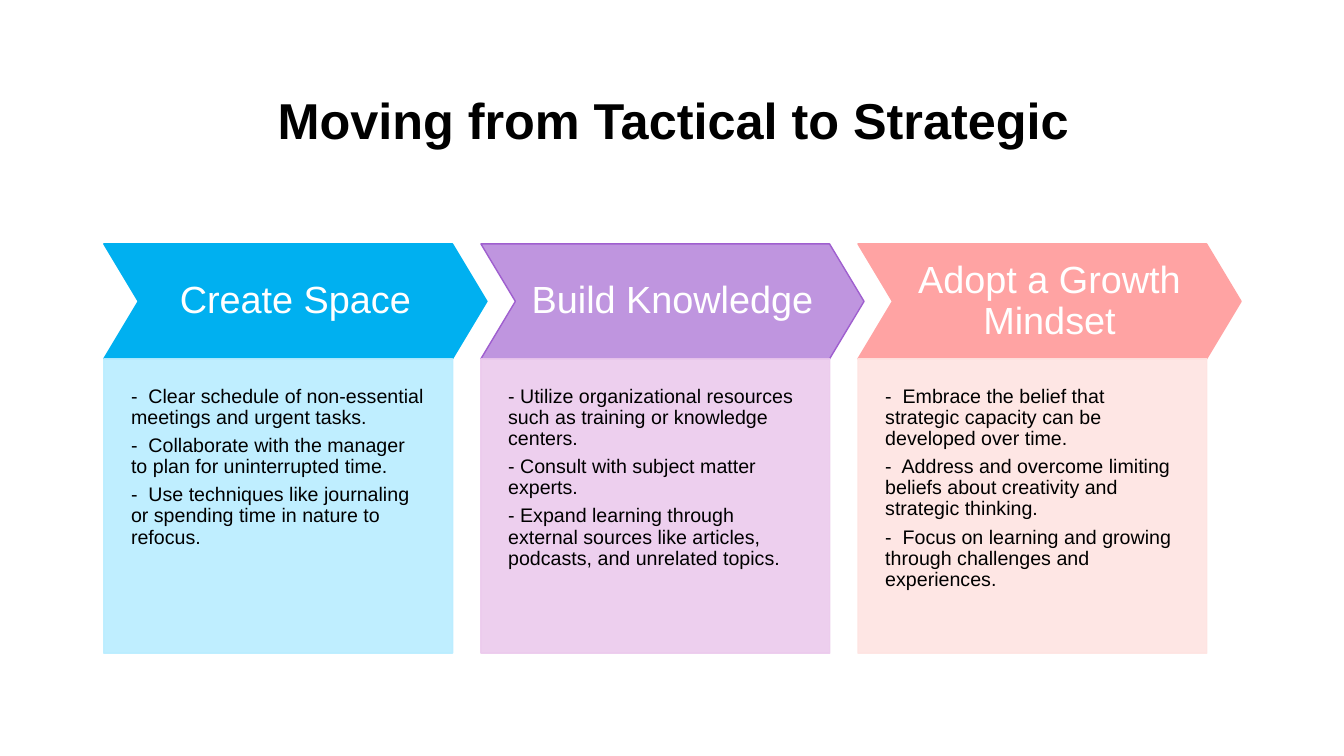
from lxml import etree
from pptx import Presentation
from pptx.dml.color import RGBColor
from pptx.enum import shapes, text
from pptx.oxml import ns
from pptx.util import Inches, Pt

COLORS = {"black": "000000", "white": "FFFFFF",
          "blue": "00B0F0", "light blue": "B9EDFF",
          "purple": "BF95DF", "dark purple": "9F5FCF", "light purple": "ECCAED",
          "coral": "FFA3A3", "light coral": "FEE4E2"}

# heading, chevron fill, chevron line, panel colour, points
STEPS = [
    ("Create Space", "blue", "blue", "light blue", [
        "-  Clear schedule of non-essential meetings and urgent tasks.",
        "-  Collaborate with the manager to plan for uninterrupted time.",
        "-  Use techniques like journaling or spending time in nature to refocus."]),
    ("Build Knowledge", "purple", "dark purple", "light purple", [
        "- Utilize organizational resources such as training or knowledge centers.",
        "- Consult with subject matter experts.",
        "- Expand learning through external sources like articles, podcasts, "
        "and unrelated topics."]),
    ("Adopt a Growth Mindset", "coral", "coral", "light coral", [
        "-  Embrace the belief that strategic capacity can be developed over time.",
        "-  Address and overcome limiting beliefs about creativity and strategic thinking.",
        "-  Focus on learning and growing through challenges and experiences."]),
]


def add_block(kind, left, top, width, height, fill, line):
    sp = s.shapes.add_shape(kind, Inches(left), Inches(top), Inches(width), Inches(height))
    sp.shadow.inherit = False
    sp.fill.solid()
    sp.fill.fore_color.rgb = RGBColor.from_string(COLORS[fill])
    sp.line.color.rgb = RGBColor.from_string(COLORS[line])
    sp.line.width = Pt(1)
    return sp


def write(sp, lines, size, color, align, anchor, margins, after=0, bold=False):
    tf = sp.text_frame
    tf.word_wrap = True
    tf.vertical_anchor = anchor
    tf.margin_left, tf.margin_top, tf.margin_right, tf.margin_bottom = map(Inches, margins)
    tf.text = "\n".join(lines)
    for p in tf.paragraphs:
        p.alignment = align
        p.line_spacing = 0.9
        p.space_after = Pt(after)
        p.font.name = "Arial"
        p.font.size = Pt(size)
        p.font.bold = bold
        p.font.color.rgb = RGBColor.from_string(COLORS[color])


prs = Presentation()
prs.slide_width, prs.slide_height = Inches(13.33), Inches(7.5)
s = prs.slides.add_slide(prs.slide_layouts[6])

# Title
title = s.shapes.add_textbox(Inches(1.67), Inches(0.6), Inches(10.02), Inches(1.24))
write(title, ["Moving from Tactical to Strategic"], 36, "black", text.PP_ALIGN.CENTER,
      text.MSO_ANCHOR.MIDDLE, (0.1, 0.05, 0.1, 0.05), bold=True)

# Three steps: chevron heading above a panel of points
for i, (heading, fill, line, panel_color, points) in enumerate(STEPS):
    left = 1.03 + 3.74 * i
    chevron = add_block(shapes.MSO_SHAPE.CHEVRON, left, 2.42, 3.8, 1.14, fill, line)
    chevron.adjustments[0] = 0.3
    write(chevron, [heading], 27, "white", text.PP_ALIGN.CENTER,
          text.MSO_ANCHOR.MIDDLE, (0.14,) * 4)

    panel = add_block(shapes.MSO_SHAPE.RECTANGLE, left, 3.56, 3.46, 2.92,
                      panel_color, panel_color)
    write(panel, points, 14, "black", text.PP_ALIGN.LEFT,
          text.MSO_ANCHOR.TOP, (0.27, 0.27, 0.27, 0.55), after=5)
    # 90 % opacity for the panel's fill and line
    for clr in panel._element.spPr.iter(ns.qn("a:srgbClr")):
        etree.SubElement(clr, ns.qn("a:alpha"), val="90000")

prs.save("out.pptx")
